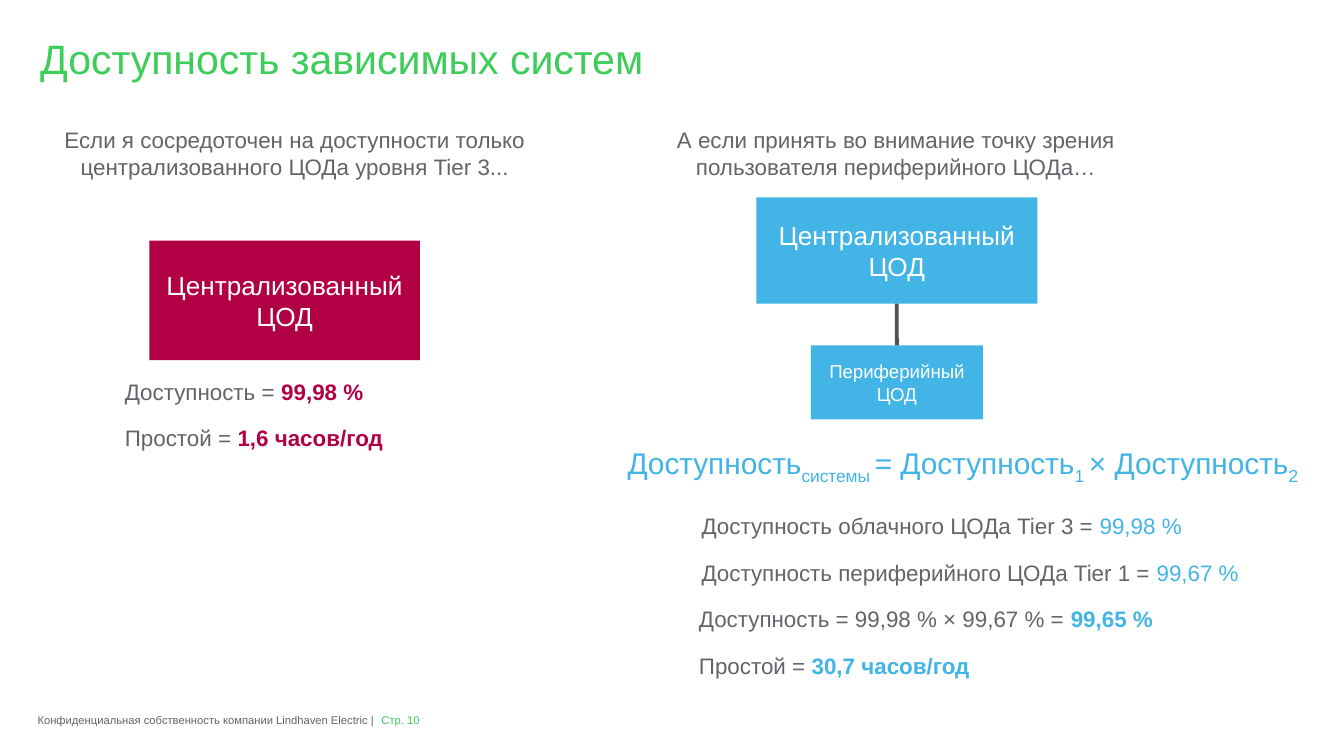
from lxml.etree import SubElement
from pptx import Presentation
from pptx.dml.color import RGBColor
from pptx.enum.shapes import MSO_CONNECTOR as Connector, MSO_SHAPE as Shape
from pptx.enum.text import MSO_ANCHOR as Anchor, PP_ALIGN as Align
from pptx.oxml.ns import qn
from pptx.util import Cm, Pt

THEME = {
    "font": "Arial",
    "green": "3DCD58", "grey": "626469", "blue": "42B4E6",
    "crimson": "B10043", "white": "FFFFFF", "line": "4F5156",
    "title": 22, "formula": 16, "box": 14, "body": 12, "small_box": 10, "footer": 6,
}
BOTTOM, TOP = 2, 0
ITEM_GAP = Pt(5.3)
FIRST_LINE_INDENT = Cm(0.05)
NO_INSETS = (0, 0, 0, 0)
QUESTION_INSETS = (0.2, 0.1, 0.2, 0.1)
DEFAULT_INSETS = (0.25, 0.13, 0.25, 0.13)

# A run is (text, colour, style), where style is "", "bold" or "sub".
TITLE = [("Доступность зависимых систем", "green", "")]
QUESTIONS = [
    (0.71, "Если я сосредоточен на доступности только централизованного ЦОДа уровня Tier 3..."),
    (12.07, "А если принять во внимание точку зрения пользователя периферийного ЦОДа…"),
]
# name: (centre x, top, width, height, text, fill, size)
BOXES = {
    "central only": (5.38, 4.55, 5.11, 2.26, "Централизованный ЦОД", "crimson", "box"),
    "central": (16.95, 3.73, 5.31, 2.01, "Централизованный ЦОД", "blue", "box"),
    "edge": (16.95, 6.53, 3.25, 1.4, "Периферийный ЦОД", "blue", "small_box"),
}
CENTRAL_RESULTS = [
    [("Доступность = ", "grey", ""), ("99,98 %", "crimson", "bold")],
    [("Простой = ", "grey", ""), ("1,6 часов/год", "crimson", "bold")],
]
FORMULA = [
    ("Доступность", "blue", ""), ("системы ", "blue", "sub"),
    ("= Доступность", "blue", ""), ("1 ", "blue", "sub"),
    ("× Доступность", "blue", ""), ("2", "blue", "sub"),
]
SYSTEM_RESULTS = [
    [("Доступность облачного ЦОДа Tier 3 = ", "grey", ""), ("99,98 %", "blue", "")],
    [("Доступность периферийного ЦОДа Tier 1 = ", "grey", ""), ("99,67 %", "blue", "")],
    [("Доступность = 99,98 % × 99,67 % = ", "grey", ""), ("99,65 %", "blue", "bold")],
    [("Простой = ", "grey", ""), ("30,7 часов/год", "blue", "bold")],
]
FOOTERS = [
    (0.71, 8.86, "Конфиденциальная собственность компании Lindhaven Electric |", "grey"),
    (7.21, 1.45, "Стр. 10", "green"),
]


def colour(name):
    return RGBColor.from_string(THEME[name])


def fill_text(frame, paragraphs, size, align=Align.LEFT, anchor=Anchor.TOP,
              insets=DEFAULT_INSETS, wrap=True, indented=0):
    """Write paragraphs of runs; the first `indented` ones get a first-line indent."""
    frame.word_wrap = wrap
    frame.vertical_anchor = anchor
    (frame.margin_left, frame.margin_top,
     frame.margin_right, frame.margin_bottom) = map(Cm, insets)
    for index, runs in enumerate(paragraphs):
        paragraph = frame.add_paragraph() if index else frame.paragraphs[0]
        paragraph.alignment = align
        if index:
            paragraph.space_before = ITEM_GAP
        if index < len(paragraphs) - 1:
            paragraph.space_after = ITEM_GAP
        if index < indented:
            paragraph._p.get_or_add_pPr().set("indent", str(FIRST_LINE_INDENT))
        for text, colour_name, style in runs:
            run = paragraph.add_run()
            run.text = text
            run.font.name = THEME["font"]
            run.font.size = Pt(THEME[size])
            run.font.bold = style == "bold"
            run.font.color.rgb = colour(colour_name)
            if style == "sub":
                run._r.get_or_add_rPr().set("baseline", "-25000")


def add_text(slide, place, paragraphs, size, **options):
    box = slide.shapes.add_textbox(*map(Cm, place))
    fill_text(box.text_frame, paragraphs, size, **options)


def add_box(slide, centre, top, width, height, text, fill, size):
    shape = slide.shapes.add_shape(
        Shape.RECTANGLE, Cm(centre - width / 2), Cm(top), Cm(width), Cm(height))
    shape.shadow.inherit = False
    shape.fill.solid()
    shape.fill.fore_color.rgb = colour(fill)
    shape.line.fill.background()
    fill_text(shape.text_frame, [[(text, "white", "")]], size,
              align=Align.CENTER, anchor=Anchor.MIDDLE)
    return shape


def add_link(slide, upper, lower):
    link = slide.shapes.add_connector(Connector.STRAIGHT, 0, 0, 0, 0)
    link.begin_connect(upper, BOTTOM)
    link.end_connect(lower, TOP)
    link.line.color.rgb = colour("line")
    link.line.width = Pt(2)
    SubElement(link._element.spPr, qn("a:effectLst"))


def main():
    presentation = Presentation()
    presentation.slide_width, presentation.slide_height = Cm(25.4), Cm(14.29)
    slide = presentation.slides.add_slide(presentation.slide_layouts[6])

    add_text(slide, (0.71, 0.64, 24.03, 1.02), [TITLE], "title",
             insets=NO_INSETS, indented=1)
    for left, question in QUESTIONS:
        add_text(slide, (left, 2.29, 9.73, 1.22), [[(question, "grey", "")]], "body",
                 align=Align.CENTER, insets=QUESTION_INSETS)

    boxes = {name: add_box(slide, *box) for name, box in BOXES.items()}
    add_link(slide, boxes["central"], boxes["edge"])

    add_text(slide, (2.31, 7.14, 7.24, 1.5), CENTRAL_RESULTS, "body",
             insets=NO_INSETS, indented=2)
    add_text(slide, (11.61, 8.28, 13.59, 0.94), [FORMULA], "formula", wrap=False)
    add_text(slide, (13.21, 9.68, 11.58, 3.61), SYSTEM_RESULTS, "body",
             insets=NO_INSETS, indented=2)
    for left, width, text, colour_name in FOOTERS:
        add_text(slide, (left, 13.49, width, 0.25), [[(text, colour_name, "")]], "footer",
                 anchor=Anchor.MIDDLE, insets=NO_INSETS)

    presentation.save("out.pptx")


if __name__ == "__main__":
    main()
